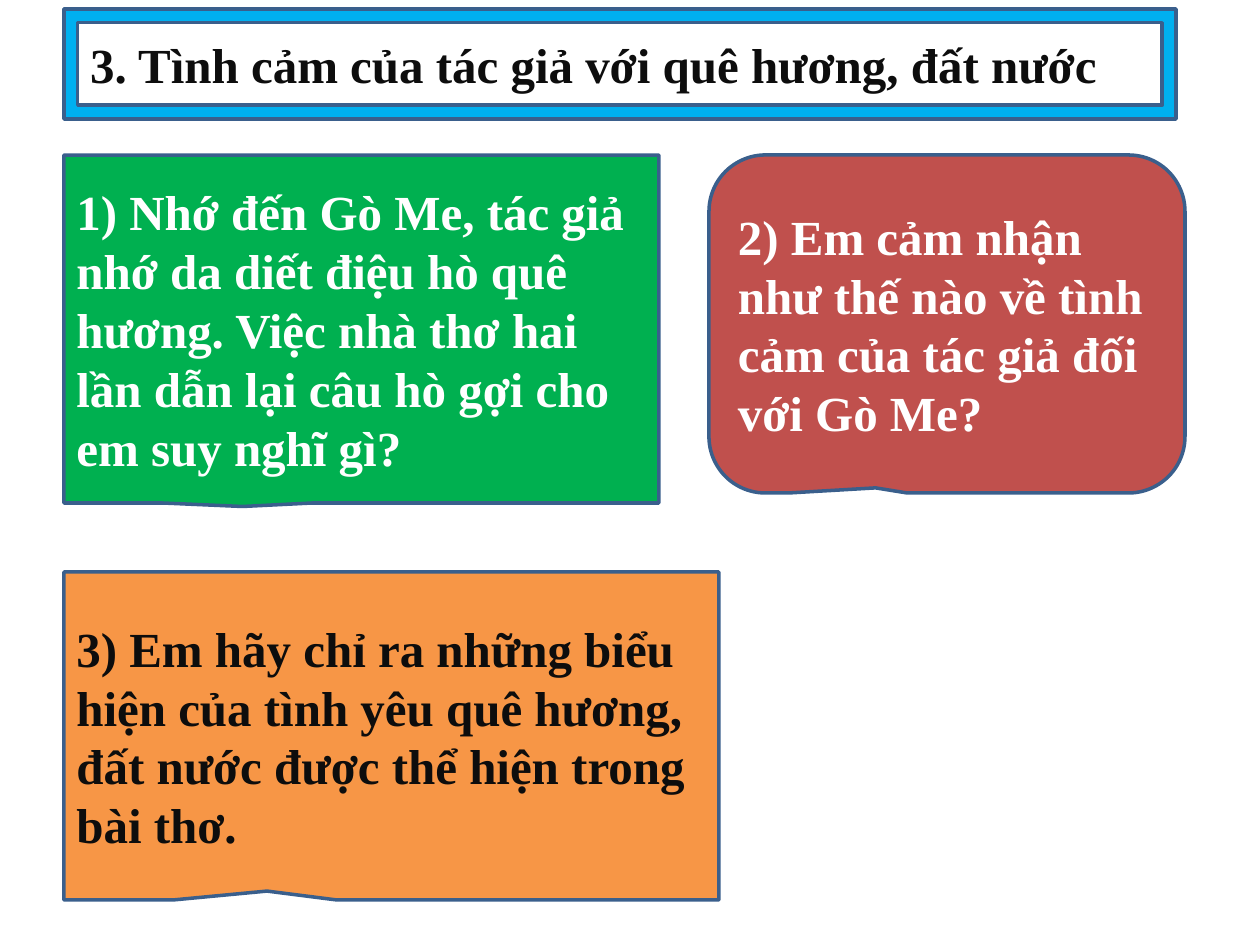
from pptx import Presentation
from pptx.dml.color import RGBColor
from pptx.enum.shapes import MSO_SHAPE
from pptx.enum.text import MSO_ANCHOR, PP_ALIGN
from pptx.util import Pt

FRAME = MSO_SHAPE.FRAME
RECT_CALLOUT = MSO_SHAPE.RECTANGULAR_CALLOUT
ROUND_CALLOUT = MSO_SHAPE.ROUNDED_RECTANGULAR_CALLOUT
MIDDLE = MSO_ANCHOR.MIDDLE
LEFT = PP_ALIGN.LEFT

EMU_PER_PX = 914400 / 126
SLIDE_SIZE = (1260, 945)
OUTLINE = "3A5F8C"
DARK, WHITE = "0D0D0D", "FFFFFF"
FONT = {"name": "Times New Roman", "size": Pt(28), "bold": True}

# wording, preset, box in px (left, top, width, height), adjustments, fill, text colour
PANELS = [
    ("3. Tình cảm của tác giả với quê hương, đất nước",
     FRAME, (64, 9, 1112, 110), (0.125,), "00B0F0", DARK),
    ("1) Nhớ đến Gò Me, tác giả nhớ da diết điệu hò quê hương. "
     "Việc nhà thơ hai lần dẫn lại câu hò gợi cho em suy nghĩ gì?",
     RECT_CALLOUT, (64, 155, 595, 348), (-0.2, 0.51), "00B050", WHITE),
    ("2) Em cảm nhận như thế nào về tình cảm của tác giả đối với Gò Me?",
     ROUND_CALLOUT, (709, 155, 476, 338), (-0.15, 0.485, 0.167), "C0504D", WHITE),
    ("3) Em hãy chỉ ra những biểu hiện của tình yêu quê hương, "
     "đất nước được thể hiện trong bài thơ.",
     RECT_CALLOUT, (64, 572, 655, 328), (-0.19, 0.473), "F79646", DARK),
]


def px(length):
    return round(length * EMU_PER_PX)


def rgb(colour):
    return RGBColor.from_string(colour)


def add_panel(slide, wording, preset, box, adjustments, fill, text_colour):
    panel = slide.shapes.add_shape(preset, *map(px, box))
    for index, value in enumerate(adjustments):
        panel.adjustments[index] = value
    panel.shadow.inherit = False
    panel.fill.solid()
    panel.fill.fore_color.rgb = rgb(fill)
    panel.line.color.rgb = rgb(OUTLINE)
    panel.line.width = Pt(2)

    frame = panel.text_frame
    frame.word_wrap = True
    frame.vertical_anchor = MIDDLE
    paragraph = frame.paragraphs[0]
    paragraph.alignment = LEFT
    run = paragraph.add_run()
    run.text = wording
    for attribute, value in FONT.items():
        setattr(run.font, attribute, value)
    run.font.color.rgb = rgb(text_colour)


def main():
    deck = Presentation()
    deck.slide_width, deck.slide_height = map(px, SLIDE_SIZE)
    slide = deck.slides.add_slide(deck.slide_layouts[6])
    for panel in PANELS:
        add_panel(slide, *panel)
    deck.save("out.pptx")


if __name__ == "__main__":
    main()
